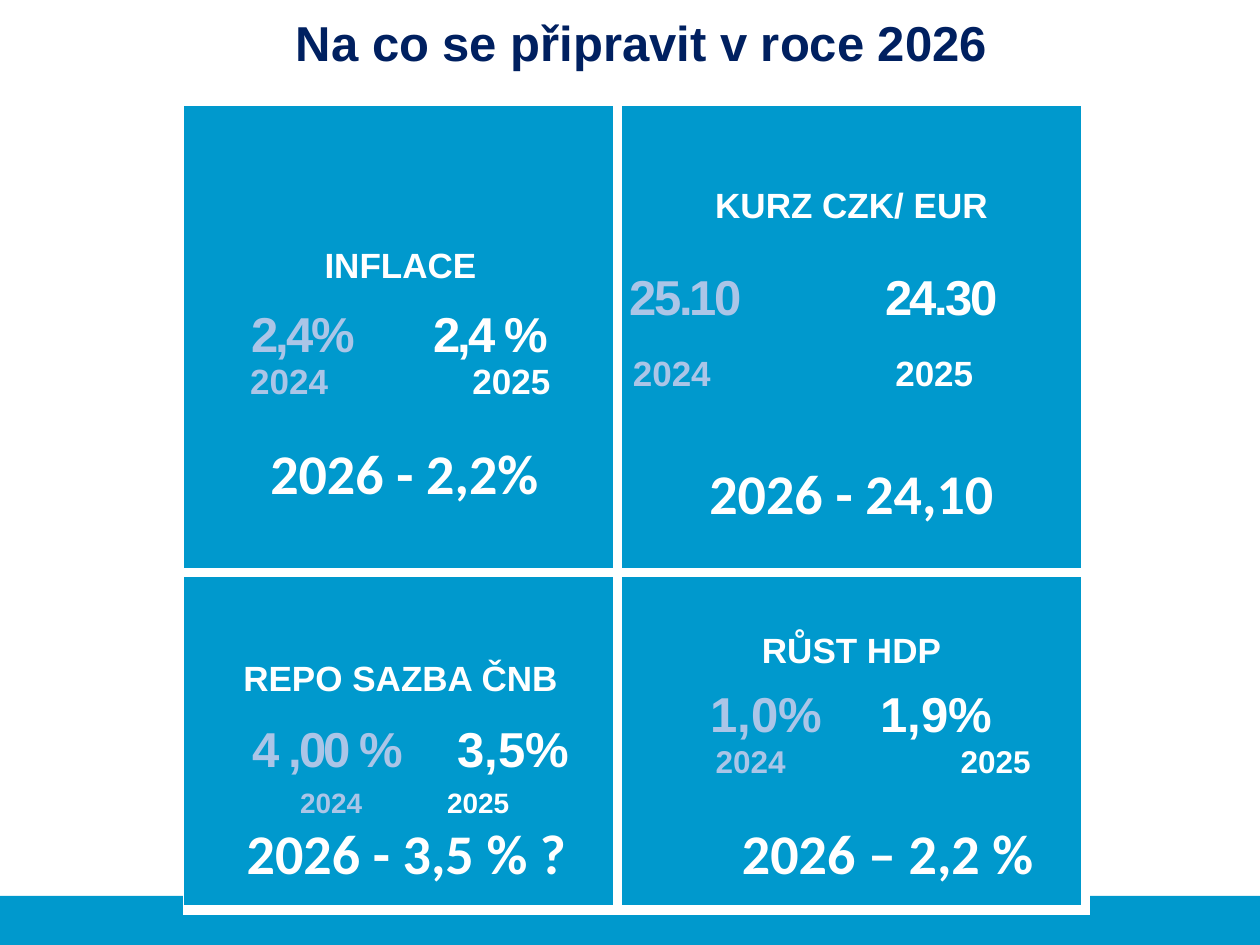
from dataclasses import dataclass
from typing import Optional

from lxml.etree import SubElement
from pptx import Presentation
from pptx.dml.color import RGBColor
from pptx.enum.shapes import MSO_SHAPE as Shape
from pptx.enum.text import MSO_ANCHOR as Anchor, MSO_AUTO_SIZE as AutoSize, PP_ALIGN as Align
from pptx.oxml.ns import qn
from pptx.util import Pt


@dataclass(frozen=True)
class Theme:
    blue: RGBColor = RGBColor(0x00, 0x99, 0xCD)
    navy: RGBColor = RGBColor(0x00, 0x20, 0x60)
    pale: RGBColor = RGBColor(0xAB, 0xC5, 0xE7)
    white: RGBColor = RGBColor(0xFF, 0xFF, 0xFF)
    font: str = "Arial"
    forecast_font: str = "Calibri"
    title: float = 28
    heading: float = 20
    value: float = 28
    forecast: float = 32
    thin_border: float = 1
    thick_border: float = 6


@dataclass(frozen=True)
class Pair:
    """A 2024 and a 2025 entry, each centred on its own tab stop."""
    before: str
    after: str
    stops: tuple[float, float]
    size: float
    gap: float
    spacing: tuple[float, float] = (0, 0)


@dataclass(frozen=True)
class Indicator:
    name: str
    top: float
    values: Pair
    years: Pair
    forecast: Optional[str] = None
    forecast_gap: float = 0


@dataclass(frozen=True)
class Forecast:
    text: str
    left: float
    top: float
    width: float
    height: float
    indent: float = 7.2
    align: Align = Align.LEFT


THEME = Theme()
TIGHT = (-1.5, -1.5)


def years(stops: tuple[float, float], size: float, gap: float) -> Pair:
    return Pair("2024", "2025", stops, size, gap)


INDICATORS = [
    [
        Indicator("INFLACE", 81,
                  Pair("2,4%", "2,4 %", (61, 168), THEME.value, 13, TIGHT),
                  years((53, 180), 20, 0)),
        Indicator("KURZ CZK/ EUR", 46.5,
                  Pair("25.10", "24.30", (32, 178), THEME.value, 26, TIGHT),
                  years((24, 174), 20, 17), "2026 - 24,10", 38),
    ],
    [
        Indicator("REPO SAZBA ČNB", 50,
                  Pair("4 ,00 %", "3,5%", (75, 181), THEME.value, 14, (-1.5, 0)),
                  years((77, 161), 16, 6)),
        Indicator("RŮST HDP", 34,
                  Pair("1,0%", "1,9%", (78, 175), THEME.value, 10),
                  years((69, 209), 18, 1)),
    ],
]
FORECASTS = [
    Forecast("2026 - 3,5 % ?", 105, 463.7, 240.5, 46, indent=36),
    Forecast("2026 – 2,2 %", 416.9, 463.7, 203.8, 46),
    Forecast("2026 - 2,2%", 133.2, 207.4, 195.8, 85, align=Align.CENTER),
]


def format_paragraph(para, size, font=THEME.font, color=THEME.white, align=Align.CENTER, gap=0):
    para.alignment = align
    if gap:
        para.space_before = Pt(gap)
    para.font.name = font
    para.font.size = Pt(size)
    para.font.bold = True
    para.font.color.rgb = color


def add_pair(frame, pair: Pair) -> None:
    para = frame.add_paragraph()
    tabs = SubElement(para._p.get_or_add_pPr(), qn("a:tabLst"))
    for stop in pair.stops:
        SubElement(tabs, qn("a:tab"), pos=str(int(Pt(stop))), algn="ctr")
    format_paragraph(para, pair.size, align=Align.LEFT, gap=pair.gap)
    entries = zip((pair.before, pair.after), (THEME.pale, THEME.white), pair.spacing)
    for text, color, spacing in entries:
        span = para.add_run()
        span.text = "\t" + text
        span.font.color.rgb = color
        if spacing:
            span._r.get_or_add_rPr().set("spc", str(int(spacing * 100)))


def set_borders(cell, row: int, column: int) -> None:
    """White rules: thin on the outer left and top, thick elsewhere."""
    properties = cell._tc.get_or_add_tcPr()
    thin, thick = THEME.thin_border, THEME.thick_border
    widths = {"L": thick if column else thin, "R": thick,
              "T": thick if row else thin, "B": thick}
    for index, (side, width) in enumerate(widths.items()):
        line = SubElement(properties, qn(f"a:ln{side}"), w=str(int(Pt(width))))
        fill = SubElement(line, qn("a:solidFill"))
        SubElement(fill, qn("a:srgbClr"), val=str(THEME.white))
        properties.insert(index, line)


def fill_cell(cell, indicator: Indicator) -> None:
    cell.fill.solid()
    cell.fill.fore_color.rgb = THEME.blue
    cell.vertical_anchor = Anchor.TOP
    cell.margin_top = Pt(indicator.top)
    frame = cell.text_frame
    heading = frame.paragraphs[0]
    heading.text = indicator.name
    format_paragraph(heading, THEME.heading)
    add_pair(frame, indicator.values)
    add_pair(frame, indicator.years)
    if indicator.forecast:
        para = frame.add_paragraph()
        para.text = indicator.forecast
        format_paragraph(para, THEME.forecast, THEME.forecast_font, gap=indicator.forecast_gap)


def add_indicator_table(page) -> None:
    table = page.shapes.add_table(2, 2, Pt(105), Pt(60), Pt(515.5), Pt(460)).table
    for column, width in zip(table.columns, (247.7, 267.8)):
        column.width = Pt(width)
    for row, height in zip(table.rows, (267, 193)):
        row.height = Pt(height)
    for row, indicators in enumerate(INDICATORS):
        for column, indicator in enumerate(indicators):
            cell = table.cell(row, column)
            fill_cell(cell, indicator)
            set_borders(cell, row, column)


def add_forecast(page, forecast: Forecast) -> None:
    box = page.shapes.add_textbox(Pt(forecast.left), Pt(forecast.top),
                                  Pt(forecast.width), Pt(forecast.height))
    frame = box.text_frame
    frame.word_wrap = True
    frame.vertical_anchor = Anchor.BOTTOM
    frame.margin_left = Pt(forecast.indent)
    para = frame.paragraphs[0]
    para.text = forecast.text
    format_paragraph(para, THEME.forecast, THEME.forecast_font, align=forecast.align)


def add_footer_bar(page) -> None:
    bar = page.shapes.add_shape(Shape.RECTANGLE, Pt(0), Pt(511.9), Pt(720), Pt(28.1))
    bar.shadow.inherit = False
    bar.fill.solid()
    bar.fill.fore_color.rgb = THEME.blue
    bar.line.fill.background()


def set_title(page, text: str) -> None:
    title = page.shapes.title
    title.left, title.top, title.width, title.height = Pt(60), Pt(0), Pt(613), Pt(57)
    frame = title.text_frame
    frame.auto_size = AutoSize.NONE
    frame.vertical_anchor = Anchor.TOP
    frame.margin_top = Pt(7)
    frame.text = text
    format_paragraph(frame.paragraphs[0], THEME.title, color=THEME.navy)


def main() -> None:
    deck = Presentation()
    deck.slide_width, deck.slide_height = Pt(720), Pt(540)
    page = deck.slides.add_slide(deck.slide_layouts[5])
    add_footer_bar(page)
    set_title(page, "Na co se připravit v roce 2026")
    add_indicator_table(page)
    for forecast in FORECASTS:
        add_forecast(page, forecast)
    deck.save("out.pptx")


if __name__ == "__main__":
    main()
